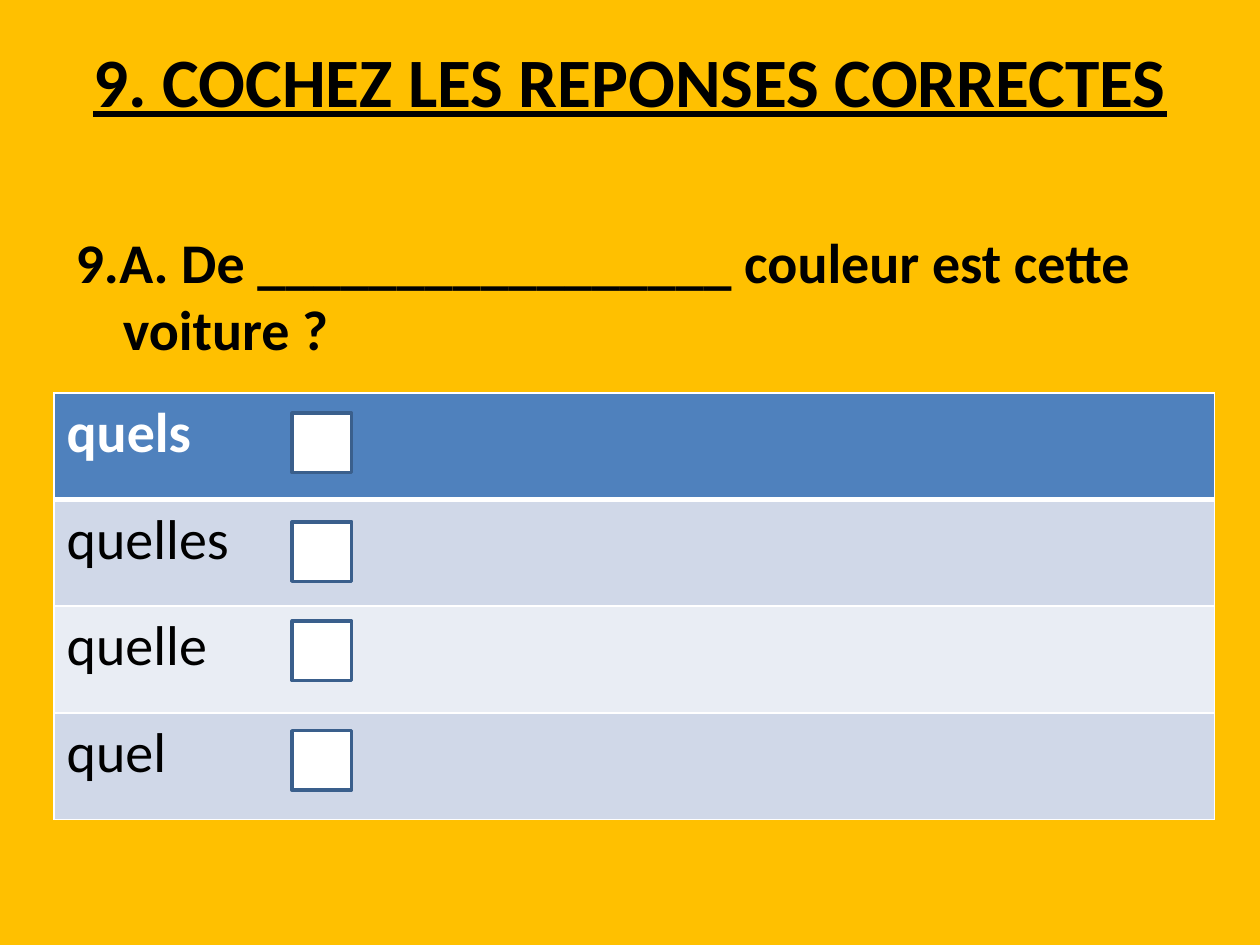
import pptx
import pptx.dml.color
import pptx.enum.shapes
import pptx.enum.text
import pptx.oxml
import pptx.oxml.ns
import pptx.util
from pptx.util import Cm

COLORS = {
    "background": "FFC000",
    "text": "000000",
    "white": "FFFFFF",
    "header": "4F81BD",
    "band_dark": "D0D8E8",
    "band_light": "E9EDF4",
    "box_line": "3A5F8C",
}


def rgb(name):
    return pptx.dml.color.RGBColor.from_string(COLORS[name])


def write(frame, text, size=32, color="text", bold=False, underline=False, align=None):
    """Write one formatted paragraph into a text frame."""
    paragraph = frame.paragraphs[0]
    paragraph.alignment = align
    run = paragraph.add_run()
    run.text = text
    font = run.font
    font.name = "Calibri"
    font.size = pptx.util.Pt(size)
    font.bold = bold
    font.underline = underline
    font.color.rgb = rgb(color)
    return paragraph


class QuizSlide:
    def __init__(self, prs):
        self.slide = prs.slides.add_slide(prs.slide_layouts[1])
        fill = self.slide.background.fill
        fill.solid()
        fill.fore_color.rgb = rgb("background")

    def placeholder(self, index, left, top, width, height):
        holder = self.slide.placeholders[index]
        holder.left, holder.top = Cm(left), Cm(top)
        holder.width, holder.height = Cm(width), Cm(height)
        frame = holder.text_frame
        frame.word_wrap = True
        frame.auto_size = pptx.enum.text.MSO_AUTO_SIZE.NONE
        frame.vertical_anchor = pptx.enum.text.MSO_ANCHOR.TOP
        return frame

    def title(self, text):
        frame = self.placeholder(0, 1.27, 0.76, 22.86, 3.18)
        frame.margin_top = 0
        write(frame, text, size=39.6, bold=True, underline=True,
              align=pptx.enum.text.PP_ALIGN.CENTER)

    def question(self, text):
        frame = self.placeholder(1, 1.27, 4.45, 22.86, 12.57)
        paragraph = write(frame, text, bold=True)
        properties = paragraph._p.get_or_add_pPr()
        properties.append(properties.makeelement(pptx.oxml.ns.qn("a:buNone"), {}))

    def border(self, cell, side, width):
        cell._tc.get_or_add_tcPr().append(pptx.oxml.parse_xml(
            f'<a:ln{side} {pptx.oxml.ns.nsdecls("a")} w="{pptx.util.Pt(width)}">'
            f'<a:solidFill><a:srgbClr val="{COLORS["white"]}"/></a:solidFill></a:ln{side}>'))

    def answers(self, words, left, top, width, row_height):
        table = self.slide.shapes.add_table(
            len(words), 1, Cm(left), Cm(top), Cm(width), Cm(row_height * len(words))).table
        for row, word in enumerate(words):
            cell = table.cell(row, 0)
            is_header = row == 0
            write(cell.text_frame, word, bold=is_header,
                  color="white" if is_header else "text")
            # The rule under the header is thicker than the others
            widths = {"L": 1, "R": 1, "T": 3 if row == 1 else 1, "B": 3 if is_header else 1}
            for side, line_width in widths.items():
                self.border(cell, side, line_width)
            band = "band_dark" if row % 2 else "band_light"
            cell.fill.solid()
            cell.fill.fore_color.rgb = rgb("header" if is_header else band)

    def checkbox(self, left, top, size):
        box = self.slide.shapes.add_shape(
            pptx.enum.shapes.MSO_SHAPE.RECTANGLE, Cm(left), Cm(top), Cm(size), Cm(size))
        box.shadow.inherit = False
        box.fill.solid()
        box.fill.fore_color.rgb = rgb("white")
        box.line.color.rgb = rgb("box_line")
        box.line.width = pptx.util.Pt(2)


def main():
    prs = pptx.Presentation()
    prs.slide_width, prs.slide_height = Cm(25.4), Cm(19.05)
    quiz = QuizSlide(prs)

    # Heading and question
    quiz.title("9. COCHEZ LES REPONSES CORRECTES")
    quiz.question("9.A. De _________________ couleur est cette voiture ?")

    # Possible answers, each with a box to tick
    quiz.answers(["quels", "quelles", "quelle", "quel"],
                 left=1.09, top=7.92, width=23.39, row_height=2.15)
    for box_top in (8.33, 10.52, 12.52, 14.73):
        quiz.checkbox(5.89, box_top, 1.2)

    prs.save("out.pptx")


if __name__ == "__main__":
    main()
